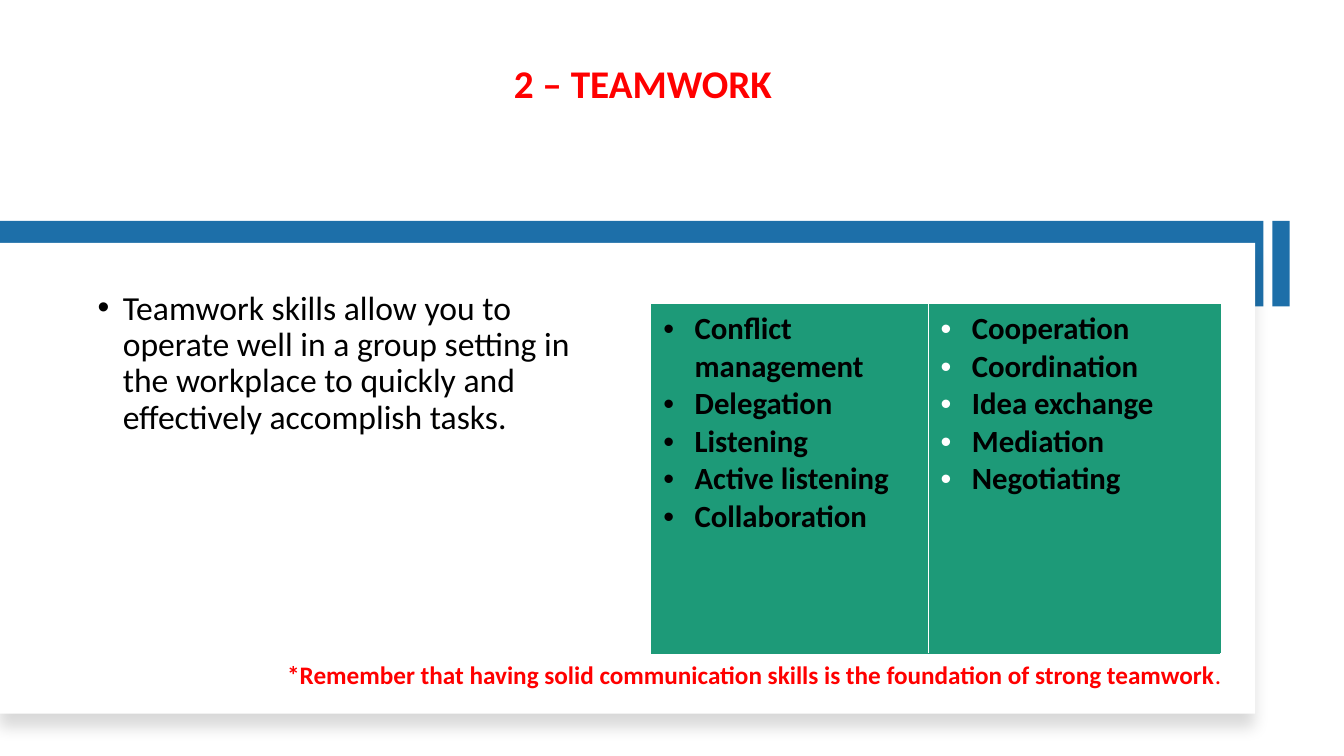
"""Build the teamwork slide with a skills table and a closing reminder."""
from dataclasses import dataclass

import lxml.etree
import pptx
import pptx.dml.color
import pptx.enum.shapes
import pptx.enum.text
import pptx.oxml
import pptx.oxml.ns
import pptx.util

Inches = pptx.util.Inches
Pt = pptx.util.Pt
qn = pptx.oxml.ns.qn


@dataclass(frozen=True)
class Theme:
    font: str = "Calibri"
    blue: str = "1D6FA9"
    green: str = "1D9A78"
    red: str = "FF0000"
    black: str = "000000"
    white: str = "FFFFFF"
    title: int = 28
    body: int = 24
    skill: int = 22
    note: int = 18


theme = Theme()


def write(para, text, size, color, bold=False):
    span = para.add_run()
    span.text = text
    formats = {"name": theme.font, "size": Pt(size), "bold": bold}
    for name, value in formats.items():
        setattr(span.font, name, value)
    span.font.color.rgb = pptx.dml.color.RGBColor.from_string(color)


def add_bullet(para, indent, color):
    properties = para._p.get_or_add_pPr()
    properties.set("marL", str(Inches(indent)))
    properties.set("indent", str(-Inches(indent)))
    bullet_color = lxml.etree.SubElement(properties, qn("a:buClr"))
    lxml.etree.SubElement(bullet_color, qn("a:srgbClr"), val=color)
    lxml.etree.SubElement(properties, qn("a:buFont"), typeface="Arial")
    lxml.etree.SubElement(properties, qn("a:buChar"), char="•")


deck = pptx.Presentation()
deck.slide_width = Inches(13.33)
deck.slide_height = Inches(7.5)
page = deck.slides.add_slide(deck.slide_layouts[5])

title = page.shapes.title
title_box = {"left": 0.87, "top": 0.42, "width": 11.01, "height": 1.42}
for name, value in title_box.items():
    setattr(title, name, Inches(value))
title_format = {
    "vertical_anchor": pptx.enum.text.MSO_ANCHOR.BOTTOM,
    "auto_size": pptx.enum.text.MSO_AUTO_SIZE.NONE,
    "margin_bottom": Inches(0.78),
}
for name, value in title_format.items():
    setattr(title.text_frame, name, value)
para = title.text_frame.paragraphs[0]
para.alignment = pptx.enum.text.PP_ALIGN.CENTER
para.line_spacing = 0.9
write(para, "2 – TEAMWORK", theme.title, theme.red, True)

panels = [
    ((0, 2.19, 12.53, 0.85), theme.blue, 0),
    ((0, 2.41, 12.45, 4.67), theme.white, 0),
    ((12.28, 2.53, 0.85, 0.17), theme.blue, 90),
]
for place, color, rotation in panels:
    panel = page.shapes.add_shape(
        pptx.enum.shapes.MSO_SHAPE.RECTANGLE, *map(Inches, place))
    panel.shadow.inherit = False
    panel.fill.solid()
    panel.fill.fore_color.rgb = pptx.dml.color.RGBColor.from_string(color)
    panel.line.fill.background()
    panel.rotation = rotation
    if color == theme.white:
        effects = panel._element.spPr.find(qn("a:effectLst"))
        shadow = lxml.etree.SubElement(
            effects, qn("a:outerShdw"), blurRad=str(Pt(11)),
            dist=str(Pt(10)), dir="5400000", algn="t", rotWithShape="0")
        shade = lxml.etree.SubElement(shadow, qn("a:srgbClr"), val=theme.black)
        lxml.etree.SubElement(shade, qn("a:alpha"), val="15000")

body = page.shapes.add_textbox(*map(Inches, (0.87, 2.84, 4.96, 3.98)))
body.text_frame.word_wrap = True
para = body.text_frame.paragraphs[0]
para.line_spacing = 0.9
para.space_before = Pt(10)
add_bullet(para, 0.25, theme.black)
write(para, "Teamwork skills allow you to operate well in a group setting in "
      "the workplace to quickly and effectively accomplish tasks.",
      theme.body, theme.black)

note = page.shapes.add_textbox(*map(Inches, (2.75, 6.49, 9.59, 0.4)))
note.text_frame.word_wrap = True
para = note.text_frame.paragraphs[0]
para.space_after = Pt(6)
write(para, "*Remember that having solid communication skills is the "
      "foundation of strong teamwork", theme.note, theme.red, True)
write(para, ".", theme.note, theme.red)

skill_columns = [
    (2.75, theme.black, ("lnL", "lnT", "lnB"),
     ["Conflict management", "Delegation", "Listening", "Active listening",
      "Collaboration"]),
    (2.89, theme.white, ("lnR", "lnT", "lnB"),
     ["Cooperation", "Coordination", "Idea exchange", "Mediation",
      "Negotiating"]),
]
table = page.shapes.add_table(
    1, len(skill_columns), *map(Inches, (6.46, 3.02, 5.64, 3.46))).table
table.first_row = False
table.horz_banding = False
cell_margins = {"margin_left": 0.12, "margin_right": 0.12,
                "margin_top": 0.06, "margin_bottom": 0.06}
for index, (width, bullet, borders, skills) in enumerate(skill_columns):
    table.columns[index].width = Inches(width)
    cell = table.cell(0, index)
    for name, value in cell_margins.items():
        setattr(cell, name, Inches(value))
    properties = cell._tc.get_or_add_tcPr()
    for border in borders:
        line = lxml.etree.SubElement(
            properties, qn("a:" + border), w=str(Pt(0.5)))
        paint = lxml.etree.SubElement(line, qn("a:solidFill"))
        lxml.etree.SubElement(paint, qn("a:srgbClr"), val=theme.green)
    fill = lxml.etree.SubElement(properties, qn("a:solidFill"))
    lxml.etree.SubElement(fill, qn("a:srgbClr"), val=theme.green)
    for row, skill in enumerate(skills):
        frame = cell.text_frame
        para = frame.add_paragraph() if row else frame.paragraphs[0]
        add_bullet(para, 0.31, bullet)
        write(para, skill, theme.skill, theme.black, True)

deck.save("out.pptx")
